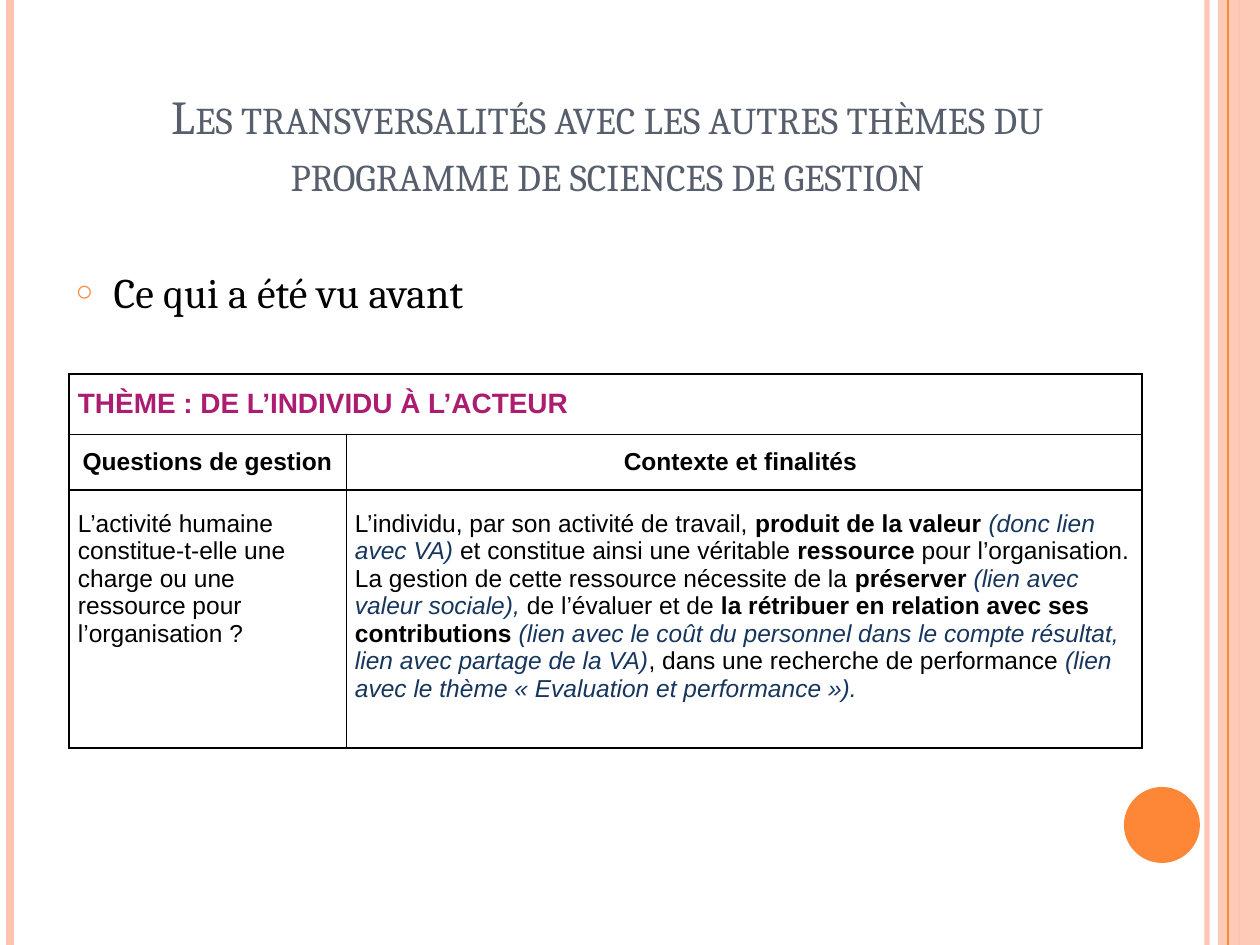
from dataclasses import dataclass

from lxml.etree import SubElement
from pptx import Presentation
from pptx.dml.color import RGBColor
from pptx.enum.shapes import MSO_CONNECTOR, MSO_SHAPE
from pptx.enum.text import MSO_ANCHOR, MSO_AUTO_SIZE, PP_ALIGN
from pptx.oxml.ns import qn
from pptx.util import Emu, Pt

SLIDE_WIDTH, SLIDE_HEIGHT = 1260, 945
PALE, ORANGE = "FEC3AE", "FE8637"
BLACK, SLATE, NAVY, MAGENTA = "000000", "575F6D", "17365D", "AC1D72"


@dataclass
class Stripe:
    x: int
    width_pt: float
    color: str
    opacity: int = 100


@dataclass
class Span:
    text: str
    size: int = 14
    color: str = BLACK
    bold: bool = False
    italic: bool = False
    font: str = "Arial"


@dataclass
class TableCell:
    row: int
    column: int
    spans: list
    alignment: PP_ALIGN = PP_ALIGN.LEFT
    anchor: MSO_ANCHOR = MSO_ANCHOR.MIDDLE
    top_margin: int = 0


def px(value: int) -> Emu:
    return Emu(round(value * 914400 / 126))


def rgb(color: str) -> RGBColor:
    return RGBColor.from_string(color)


def strong(text: str) -> Span:
    return Span(text, bold=True)


def link(text: str) -> Span:
    return Span(text, color=NAVY, italic=True)


def set_opacity(properties, percent: int) -> None:
    color = next(properties.iter(qn("a:srgbClr")))
    SubElement(color, qn("a:alpha"), val=str(percent * 1000))


def add_span(paragraph, span: Span):
    run = paragraph.add_run()
    run.text = span.text
    run.font.name = span.font
    run.font.size = Pt(span.size)
    run.font.bold = span.bold
    run.font.italic = span.italic
    run.font.color.rgb = rgb(span.color)
    return run


def add_stripe(slide, stripe: Stripe) -> None:
    line = slide.shapes.add_connector(
        MSO_CONNECTOR.STRAIGHT, px(stripe.x), px(0), px(stripe.x), px(SLIDE_HEIGHT))
    line.line.color.rgb = rgb(stripe.color)
    line.line.width = Pt(stripe.width_pt)
    properties = line._element.spPr
    if stripe.opacity < 100:
        set_opacity(properties, stripe.opacity)
    SubElement(properties, qn("a:effectLst"))


def add_plain_shape(slide, kind, left: int, top: int, width: int, height: int, color: str):
    shape = slide.shapes.add_shape(kind, px(left), px(top), px(width), px(height))
    shape.shadow.inherit = False
    shape.fill.solid()
    shape.fill.fore_color.rgb = rgb(color)
    shape.line.fill.background()
    return shape


def place_text(shape, left: int, top: int, width: int, height: int, anchor):
    shape.left, shape.top, shape.width, shape.height = map(px, (left, top, width, height))
    frame = shape.text_frame
    frame.word_wrap = True
    frame.auto_size = MSO_AUTO_SIZE.NONE
    frame.vertical_anchor = anchor
    return frame.paragraphs[0]


def set_bullet(paragraph, character: str, color: str, percent: int, indent: int) -> None:
    properties = paragraph._p.get_or_add_pPr()
    properties.set("marL", str(px(indent)))
    properties.set("indent", str(-px(indent)))
    bullet_color = SubElement(properties, qn("a:buClr"))
    SubElement(bullet_color, qn("a:srgbClr"), val=color)
    SubElement(properties, qn("a:buSzPct"), val=str(percent * 1000))
    SubElement(properties, qn("a:buChar"), char=character)


def format_cell(cell, borders: dict) -> None:
    """Clear the fill and draw the four borders, given as widths in points."""
    properties = cell._tc.get_or_add_tcPr()
    for side, width in borders.items():
        line = SubElement(properties, qn(f"a:{side}"), w=str(Pt(width)))
        fill = SubElement(line, qn("a:solidFill"))
        SubElement(fill, qn("a:srgbClr"), val=BLACK)
    cell.fill.background()


def fill_cell(table, content: TableCell) -> None:
    cell = table.cell(content.row, content.column)
    cell.vertical_anchor = content.anchor
    cell.margin_left = cell.margin_right = px(9)
    cell.margin_top, cell.margin_bottom = px(content.top_margin), px(0)
    paragraph = cell.text_frame.paragraphs[0]
    paragraph.alignment = content.alignment
    for span in content.spans:
        add_span(paragraph, span)


def add_theme_table(slide, left: int, top: int, columns: list, rows: list, contents: list):
    table = slide.shapes.add_table(
        len(rows), len(columns), px(left), px(top), px(sum(columns)), px(sum(rows))).table
    table.first_row = table.horz_banding = False
    for column, width in zip(table.columns, columns):
        column.width = px(width)
    for row, height in zip(table.rows, rows):
        row.height = px(height)
    table.cell(0, 0).merge(table.cell(0, 1))
    outer, inner = 1, 0.5
    for r in range(len(rows)):
        for c in range(len(columns)):
            format_cell(table.cell(r, c), {
                "lnL": outer if c == 0 else inner,
                "lnR": outer if c == len(columns) - 1 or r == 0 else inner,
                "lnT": inner if r == 1 else outer,
                "lnB": inner if r == 0 else outer})
    for content in contents:
        fill_cell(table, content)


STRIPES = [Stripe(1207, 3, PALE, 93), Stripe(10, 4.5, PALE), Stripe(1239, 1.5, PALE)]

CONTEXT = [
    Span("L’individu, par son activité de travail, "),
    strong("produit de la valeur "),
    link("(donc lien avec VA)"),
    Span(" et constitue ainsi une véritable "),
    strong("ressource"),
    Span(" pour l’organisation. La gestion de cette ressource nécessite de la "),
    strong("préserver "),
    link("(lien avec valeur sociale),"),
    Span(" de l’évaluer et de "),
    strong("la rétribuer en relation avec ses contributions "),
    link("(lien avec le coût du personnel dans le compte résultat, "
         "lien avec partage de la VA)"),
    Span(", dans une recherche de performance "),
    link("(lien avec le thème « Evaluation et performance »)."),
]
QUESTION = [Span("L’activité humaine constitue-t-elle une charge ou une ressource "
                 "pour l’organisation ?")]
CELLS = [
    TableCell(0, 0, [Span("THÈME : DE L’INDIVIDU À L’ACTEUR", 16, MAGENTA, True)]),
    TableCell(1, 0, [strong("Questions de gestion")], PP_ALIGN.CENTER),
    TableCell(1, 1, [strong("Contexte et finalités ")], PP_ALIGN.CENTER),
    TableCell(2, 0, QUESTION, anchor=MSO_ANCHOR.TOP, top_margin=20),
    TableCell(2, 1, CONTEXT, anchor=MSO_ANCHOR.TOP, top_margin=20),
]


def main() -> None:
    presentation = Presentation()
    presentation.slide_width, presentation.slide_height = px(SLIDE_WIDTH), px(SLIDE_HEIGHT)
    slide = presentation.slides.add_slide(presentation.slide_layouts[1])

    # Side decoration
    for stripe in STRIPES:
        add_stripe(slide, stripe)
    band = add_plain_shape(slide, MSO_SHAPE.RECTANGLE, 1218, 0, 42, SLIDE_HEIGHT, PALE)
    set_opacity(band._element.spPr, 87)
    add_stripe(slide, Stripe(1228, 0.75, ORANGE))
    add_plain_shape(slide, MSO_SHAPE.OVAL, 1124, 787, 76, 76, ORANGE)

    # Title and body
    title = place_text(slide.shapes.title, 63, 59, 1089, 148, MSO_ANCHOR.BOTTOM)
    title.alignment = PP_ALIGN.CENTER
    run = add_span(title, Span("Les transversalités avec les autres thèmes du programme "
                               "de sciences de gestion", 27, SLATE, font="Cambria"))
    run.font._element.set("cap", "small")
    body = place_text(slide.placeholders[1], 63, 260, 1079, 74, MSO_ANCHOR.TOP)
    body.space_before = Pt(6)
    set_bullet(body, "○", ORANGE, 70, 38)
    add_span(body, Span("Ce qui a été vu avant", 24, font="Cambria"))

    # Theme table
    add_theme_table(slide, 69, 374, [277, 796], [60, 56, 258], CELLS)
    presentation.save("out.pptx")


if __name__ == "__main__":
    main()
